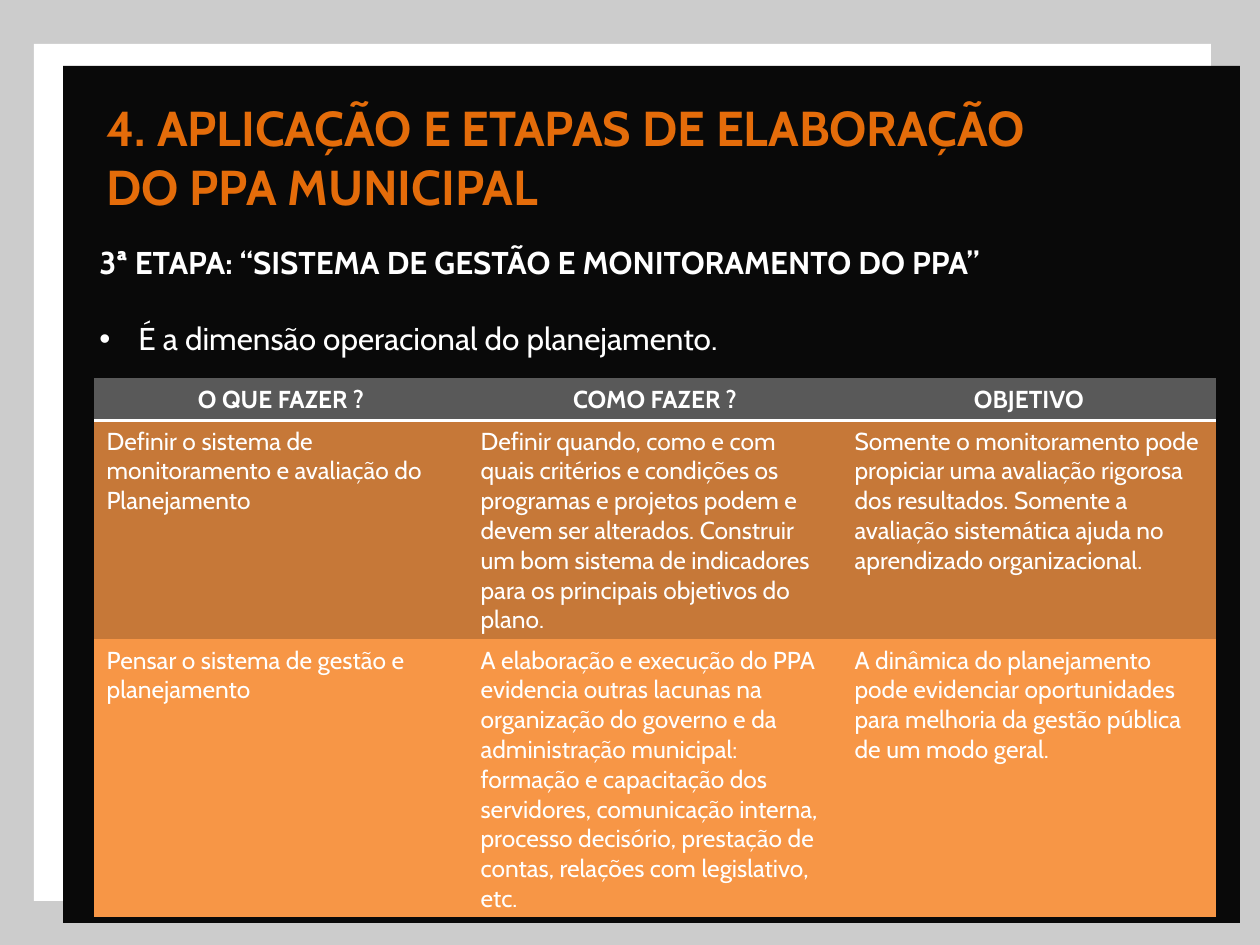
from dataclasses import dataclass

from lxml import etree
from pptx import Presentation
from pptx.dml.color import RGBColor
from pptx.enum.shapes import MSO_SHAPE
from pptx.enum.text import PP_ALIGN
from pptx.oxml.ns import qn
from pptx.util import Emu, Pt

PX_PER_INCH = 126
FONT = "Cabin"
WHITE = RGBColor(0xFF, 0xFF, 0xFF)
BLACK = RGBColor(0x00, 0x00, 0x00)
PANEL = RGBColor(0x09, 0x09, 0x09)
ORANGE = RGBColor(0xE4, 0x6C, 0x0A)
HEADER_GRAY = RGBColor(0x59, 0x59, 0x59)
DARK_ORANGE = RGBColor(0xC6, 0x78, 0x38)
LIGHT_ORANGE = RGBColor(0xF7, 0x96, 0x46)
RECTANGLE = MSO_SHAPE.RECTANGLE
CENTER, LEFT = PP_ALIGN.CENTER, PP_ALIGN.LEFT
NO_STYLE = "{2D5ABB26-0587-4C30-8999-92F81FD0307C}"


@dataclass(frozen=True)
class Area:
    left: int
    top: int
    width: int
    height: int

    def emu(self) -> tuple[Emu, Emu, Emu, Emu]:
        return px(self.left), px(self.top), px(self.width), px(self.height)


@dataclass(frozen=True)
class Backdrop:
    area: Area
    color: RGBColor
    opacity: int = 100


@dataclass(frozen=True)
class TableRow:
    height: int
    fill: RGBColor
    texts: tuple[str, str, str]
    header: bool = False


BACKDROPS = [
    Backdrop(Area(0, 0, 1260, 945), BLACK, 20),
    Backdrop(Area(34, 44, 1177, 857), WHITE),
    Backdrop(Area(63, 66, 1177, 857), PANEL),
]
TITLE_AREA = Area(94, 91, 979, 131)
STAGE_AREA = Area(87, 237, 1138, 127)
TABLE_AREA = Area(94, 378, 1122, 538)
BULLET_INDENT = 39

TITLE = "4. APLICAÇÃO E ETAPAS DE ELABORAÇÃO DO PPA MUNICIPAL"
STAGE = "3ª ETAPA: “SISTEMA DE GESTÃO E MONITORAMENTO DO PPA”"
STAGE_NOTE = "É a dimensão operacional do planejamento."
ROWS = [
    TableRow(41, HEADER_GRAY, ("O QUE FAZER ?", "COMO FAZER ?", "OBJETIVO"), header=True),
    TableRow(219, DARK_ORANGE, (
        "Definir o sistema de monitoramento e avaliação do\nPlanejamento",
        "Definir quando, como e com quais critérios e condições os programas e projetos "
        "podem e devem ser alterados. Construir um bom sistema de indicadores para os "
        "principais objetivos do plano.",
        "Somente o monitoramento pode propiciar uma avaliação rigorosa dos resultados. "
        "Somente a avaliação sistemática ajuda no aprendizado organizacional.",
    )),
    TableRow(278, LIGHT_ORANGE, (
        "Pensar o sistema de gestão e planejamento",
        "A elaboração e execução do PPA evidencia outras lacunas na organização do "
        "governo e da administração municipal: formação e capacitação dos servidores, "
        "comunicação interna, processo decisório, prestação de contas, relações com "
        "legislativo, etc.",
        "A dinâmica do planejamento pode evidenciar oportunidades para melhoria da "
        "gestão pública de um modo geral.",
    )),
]


def px(length: int) -> Emu:
    return Emu(round(length * 914400 / PX_PER_INCH))


def style_paragraph(para, size: int, color: RGBColor, bold: bool) -> None:
    for span in para.runs:
        span.font.name = FONT
        span.font.size = Pt(size)
        span.font.bold = bold
        span.font.color.rgb = color


def add_backdrop(page, backdrop: Backdrop) -> None:
    box = page.shapes.add_shape(RECTANGLE, *backdrop.area.emu())
    box.shadow.inherit = False
    box.line.fill.background()
    box.fill.solid()
    box.fill.fore_color.rgb = backdrop.color
    if backdrop.opacity < 100:
        color = box.fill._xPr.find(qn("a:solidFill"))[0]
        etree.SubElement(color, qn("a:alpha"), val=str(backdrop.opacity * 1000))


def add_text(page, area: Area, text: str, size: int, color: RGBColor):
    """Add a wrapped box with one bold paragraph and return its text frame."""
    frame = page.shapes.add_textbox(*area.emu()).text_frame
    frame.word_wrap = True
    frame.text = text
    style_paragraph(frame.paragraphs[0], size, color, bold=True)
    return frame


def add_bullet(frame, text: str, size: int, color: RGBColor) -> None:
    para = frame.add_paragraph()
    properties = para._p.get_or_add_pPr()
    properties.set("marL", str(px(BULLET_INDENT)))
    properties.set("indent", str(-px(BULLET_INDENT)))
    etree.SubElement(properties, qn("a:buFont"), typeface="Arial")
    etree.SubElement(properties, qn("a:buChar"), char="•")
    para.text = text
    para.space_before = Pt(22)
    style_paragraph(para, size, color, bold=False)


def add_bottom_border(cell, color: RGBColor, width: int) -> None:
    properties = cell._tc.get_or_add_tcPr()
    border = etree.Element(qn("a:lnB"), w=str(Pt(width)))
    fill = etree.SubElement(border, qn("a:solidFill"))
    etree.SubElement(fill, qn("a:srgbClr"), val=str(color))
    properties.insert(0, border)


def fill_cell(cell, text: str, row: TableRow) -> None:
    cell.fill.solid()
    cell.fill.fore_color.rgb = row.fill
    cell.text_frame.text = text
    for para in cell.text_frame.paragraphs:
        para.alignment = CENTER if row.header else LEFT
        style_paragraph(para, 14, WHITE, bold=row.header)
    if row.header:
        add_bottom_border(cell, WHITE, 2)


def add_steps_table(page, area: Area, rows: list[TableRow]) -> None:
    column_count = len(rows[0].texts)
    frame = page.shapes.add_table(len(rows), column_count, *area.emu())
    table = frame.table
    table.horz_banding = False
    table._tbl.tblPr.find(qn("a:tableStyleId")).text = NO_STYLE
    for column in table.columns:
        column.width = px(area.width // column_count)
    for row_index, row in enumerate(rows):
        table.rows[row_index].height = px(row.height)
        for column_index, text in enumerate(row.texts):
            fill_cell(table.cell(row_index, column_index), text, row)


def main() -> None:
    deck = Presentation()
    deck.slide_width, deck.slide_height = px(1260), px(945)
    page = deck.slides.add_slide(deck.slide_layouts[6])
    for backdrop in BACKDROPS:
        add_backdrop(page, backdrop)
    stage_frame = add_text(page, STAGE_AREA, STAGE, 18, WHITE)
    add_bullet(stage_frame, STAGE_NOTE, 18, WHITE)
    add_text(page, TITLE_AREA, TITLE, 28, ORANGE)
    add_steps_table(page, TABLE_AREA, ROWS)
    deck.save("out.pptx")


if __name__ == "__main__":
    main()
